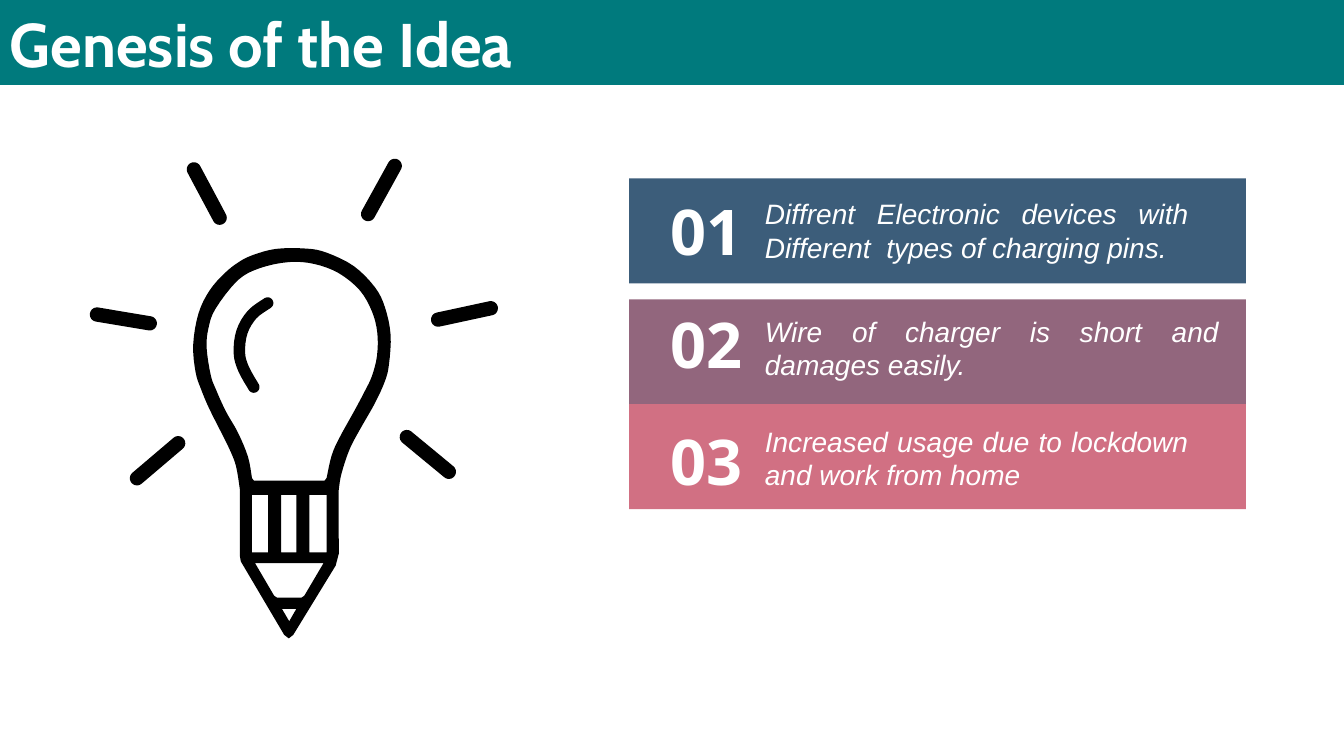
import math
from dataclasses import dataclass

from pptx import Presentation
from pptx import util as u
from pptx.dml.color import RGBColor
from pptx.enum import shapes, text

TEAL = RGBColor(0x00, 0x7A, 0x7D)
BLUE = RGBColor(0x3C, 0x5D, 0x7A)
PLUM = RGBColor(0x92, 0x66, 0x7D)
ROSE = RGBColor(0xD1, 0x70, 0x83)
WHITE = RGBColor(0xFF, 0xFF, 0xFF)
BLACK = RGBColor(0x00, 0x00, 0x00)

Point = tuple[float, float]

CARD_LEFT, CARD_WIDTH, CARD_HEIGHT = 449.3, 440.6, 75
NUMBER_LEFT, NUMBER_WIDTH, NUMBER_HEIGHT = 457.9, 92.9, 61.9
REASON_LEFT, REASON_HEIGHT = 539.3, 55.4


@dataclass(frozen=True)
class Card:
    number: str
    reason: str
    color: RGBColor
    top: float
    number_top: float
    reason_top: float
    reason_width: float


@dataclass(frozen=True)
class Stroke:
    """A round-ended line along a spine of points."""
    spine: list[Point]
    radius: float


CARDS = [
    Card("01", "Diffrent Electronic devices with Different  types of charging pins.",
         BLUE, 127.4, 133.9, 136.8, 316.8),
    Card("02", "Wire of charger is short and damages easily.",
         PLUM, 213.8, 214.6, 221, 338.4),
    Card("03", "Increased usage due to lockdown and work from home",
         ROSE, 288.7, 298.1, 299.5, 316.8),
]

RAY_RADIUS = 5.1
RAYS = [
    Stroke(spine, RAY_RADIUS) for spine in (
        [(127.3, 316.6), (97.9, 341.6)],
        [(282, 118.5), (263, 152.9)],
        [(138.5, 121), (156.9, 155.5)],
        [(290.6, 312.2), (320.6, 337)],
        [(350.6, 220.2), (313, 228.3)],
        [(69.3, 224.7), (107, 231)],
    )
]
GLINT = Stroke([(191.2, 216.5), (180.2, 224.6), (172.9, 237), (171, 252),
                (174, 263.5), (181.3, 276.5)], 4.1)

GLASS_OUTSIDE = [
    (171.4, 349.9), (168.5, 332.6), (163.4, 319.7), (156.2, 305.3), (149, 290.9),
    (143.3, 277.2), (139.7, 265.7), (138, 246.2), (141.8, 223.9), (149.8, 207.4),
    (160.6, 195.1), (170.6, 187.2), (180.7, 182.2), (197.3, 177.8), (218.9, 177.6),
    (233.3, 180.5), (252.7, 190.1), (267.8, 205.2), (275, 219.6), (279, 239),
    (277.9, 259.9), (275, 272.2), (267.8, 288), (259.2, 303.1), (251.3, 317.5),
    (247, 328.3), (243.4, 340.6), (241.9, 350.6),
]
PENCIL_OUTSIDE = [
    (242, 395.5), (239.8, 404), (209.5, 453.5), (206.3, 456), (203, 453.5),
    (172, 401), (171.4, 397.4),
]
GLASS_INSIDE = [
    (180, 341.5), (177.1, 326.2), (169.9, 308.9), (161.3, 293.8), (154.1, 277.9),
    (150.5, 267.8), (147.6, 248.4), (149, 234), (154.1, 220.3), (169.9, 200.2),
    (185.8, 191.5), (206.6, 187.2), (224.6, 188.6), (241.9, 195.1), (257, 207.4),
    (265.7, 222.5), (269.5, 237.6), (269.3, 254.2), (265.7, 268.6), (260.6, 279.4),
    (253.4, 293), (242.6, 312.5), (236.9, 325.4), (233.3, 341.5),
]
GLASS_BASE = [(231.8, 343.4), (181.4, 343.4)]
WINDOW_SPANS = [(180, 191.5), (200.9, 211.7), (221, 233.3)]
WINDOW_TOP, WINDOW_BOTTOM = 353.5, 394.6
CONE = [(182.2, 402.3), (231.1, 402.3), (217.4, 425.5), (215.3, 427),
        (198, 427), (195.8, 425.5)]
TIP = [(201.4, 434.9), (211.7, 434.9), (206.6, 443.8)]


def smooth(knots: list[Point], steps: int = 4) -> list[Point]:
    """Return points on a Catmull-Rom curve through the knots."""
    padded = [knots[0], *knots, knots[-1]]
    curve = []
    for a, b, c, d in zip(padded, padded[1:], padded[2:], padded[3:]):
        for step in range(steps):
            t = step / steps
            curve.append(tuple(
                q + t / 2 * (r - p + t * (2 * p - 5 * q + 4 * r - s
                                          + t * (3 * (q - r) + s - p)))
                for p, q, r, s in zip(a, b, c, d)))
    return curve + [knots[-1]]


def stroke_outline(stroke: Stroke) -> list[Point]:
    spine = smooth(stroke.spine)
    last = len(spine) - 1
    right, left = [], []

    def offset(center: Point, angle: float) -> Point:
        return (center[0] + stroke.radius * math.cos(angle),
                center[1] + stroke.radius * math.sin(angle))

    def cap(center: Point, heading: float) -> list[Point]:
        return [offset(center, heading + math.radians(turn)) for turn in range(-75, 90, 15)]

    headings = []
    for index, center in enumerate(spine):
        before, after = spine[max(index - 1, 0)], spine[min(index + 1, last)]
        heading = math.atan2(after[1] - before[1], after[0] - before[0])
        headings.append(heading)
        right.append(offset(center, heading - math.pi / 2))
        left.append(offset(center, heading + math.pi / 2))
    return (right + cap(spine[-1], headings[-1]) + left[::-1]
            + cap(spine[0], headings[0] + math.pi))


def paint(shape, color: RGBColor) -> None:
    shape.fill.solid()
    shape.fill.fore_color.rgb = color
    shape.line.fill.background()
    shape.shadow.inherit = False


def add_outline(group, contours: list[list[Point]]) -> None:
    """Add one black shape; contours after the first are holes."""
    contours = [[(u.Pt(x), u.Pt(y)) for x, y in contour] for contour in contours]
    builder = group.shapes.build_freeform(*contours[0][0])
    builder.add_line_segments(contours[0][1:])
    for hole in contours[1:]:
        builder.move_to(*hole[0])
        builder.add_line_segments(hole[1:])
    paint(builder.convert_to_shape(), BLACK)


def add_block(slide, left: float, top: float, width: float, height: float, color: RGBColor):
    shape = slide.shapes.add_shape(
        shapes.MSO_SHAPE.RECTANGLE, u.Pt(left), u.Pt(top), u.Pt(width), u.Pt(height))
    paint(shape, color)
    return shape


def write(shape, words: str, font_name: str, size: float, align: text.PP_ALIGN,
          bold: bool = False, italic: bool = False) -> None:
    frame = shape.text_frame
    frame.text = words
    frame.word_wrap = True
    frame.auto_size = text.MSO_AUTO_SIZE.SHAPE_TO_FIT_TEXT
    paragraph = frame.paragraphs[0]
    paragraph.alignment = align
    font = paragraph.runs[0].font
    font.name, font.size = font_name, u.Pt(size)
    font.bold, font.italic = bold, italic
    font.color.rgb = WHITE


def add_bulb(slide) -> None:
    group = slide.shapes.add_group_shape()
    windows = [[(left, WINDOW_TOP), (right, WINDOW_TOP),
                (right, WINDOW_BOTTOM), (left, WINDOW_BOTTOM)]
               for left, right in WINDOW_SPANS]
    add_outline(group, [smooth(GLASS_OUTSIDE) + PENCIL_OUTSIDE,
                        smooth(GLASS_INSIDE) + GLASS_BASE, *windows, CONE, TIP])
    for stroke in [*RAYS, GLINT]:
        add_outline(group, [stroke_outline(stroke)])


def add_cards(slide) -> None:
    for card in CARDS:
        add_block(slide, CARD_LEFT, card.top, CARD_WIDTH, CARD_HEIGHT, card.color)
    for card in CARDS:
        number = slide.shapes.add_textbox(
            u.Pt(NUMBER_LEFT), u.Pt(card.number_top), u.Pt(NUMBER_WIDTH), u.Pt(NUMBER_HEIGHT))
        write(number, card.number, "Open Sans", 45, text.PP_ALIGN.CENTER, bold=True)
    for card in CARDS:
        reason = slide.shapes.add_textbox(
            u.Pt(REASON_LEFT), u.Pt(card.reason_top), u.Pt(card.reason_width), u.Pt(REASON_HEIGHT))
        write(reason, card.reason, "Arial", 20, text.PP_ALIGN.JUSTIFY, italic=True)


def main() -> None:
    presentation = Presentation()
    presentation.slide_width, presentation.slide_height = u.Pt(960), u.Pt(540)
    slide = presentation.slides.add_slide(presentation.slide_layouts[6])
    title = add_block(slide, 0, 0, 960, 60.6, TEAL)
    write(title, "Genesis of the Idea", "Cabin", 44, text.PP_ALIGN.LEFT, bold=True)
    add_bulb(slide)
    add_cards(slide)
    presentation.save("out.pptx")


if __name__ == "__main__":
    main()
